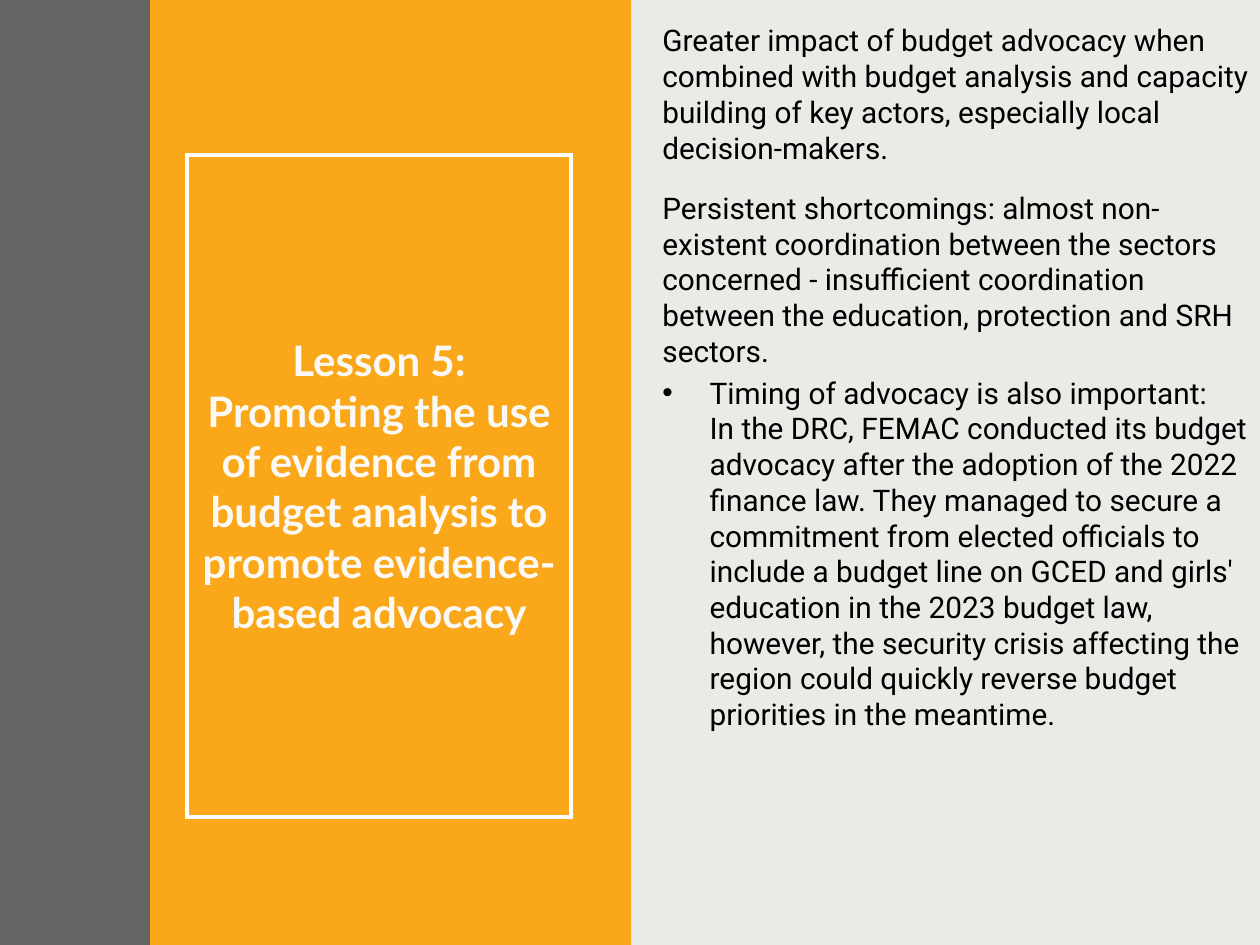
import pptx
import pptx.util
import pptx.dml.color
import pptx.enum.shapes
import pptx.enum.text
import pptx.oxml
import pptx.oxml.ns
from pptx.util import Pt


def color(fill, code, alpha=None):
    """Make a fill solid, with an optional opacity in percent."""
    fill.solid()
    fill.fore_color.rgb = pptx.dml.color.RGBColor.from_string(code)
    if alpha is not None:
        tone = fill._xPr.find(".//" + pptx.oxml.ns.qn("a:srgbClr"))
        node = pptx.oxml.parse_xml(
            f'<a:alpha {pptx.oxml.ns.nsdecls("a")} val="{alpha * 1000}"/>')
        tone.append(node)


def place(shape, left, top, width, height):
    shape.left, shape.top = Pt(left), Pt(top)
    shape.width, shape.height = Pt(width), Pt(height)


deck = pptx.Presentation()
deck.slide_width, deck.slide_height = Pt(720), Pt(540)
slide = deck.slides.add_slide(deck.slide_layouts[1])
color(slide.background.fill, "FAF9F5")

# Full-height panels
panels = [
    (360, 360, "304048", 8),
    (85.7, 275, "FAA819", None),
    (0, 85.7, "404040", 80),
]
for left, width, code, alpha in panels:
    panel = slide.shapes.add_shape(
        pptx.enum.shapes.MSO_SHAPE.RECTANGLE, Pt(left), 0, Pt(width), Pt(540))
    panel.shadow.inherit = False
    panel.line.fill.background()
    color(panel.fill, code, alpha)

# Bring the text in front of the panels
title, body = slide.placeholders
for holder in (title, body):
    slide.shapes._spTree.append(holder._element)
    holder.text_frame.word_wrap = True
    holder.text_frame.auto_size = pptx.enum.text.MSO_AUTO_SIZE.NONE

# Framed title with square corners
place(title, 106.8, 88.7, 219.6, 378)
color(title.line.fill, "FFFFFF")
title.line.width = Pt(2.25)
title.line._get_or_add_ln().append(pptx.oxml.parse_xml(
    f'<a:miter {pptx.oxml.ns.nsdecls("a")} lim="800000"/>'))
title.text_frame.text = (
    "Lesson 5: Promoting the use of evidence from budget analysis "
    "to promote evidence-based advocacy")
title.text_frame.vertical_anchor = pptx.enum.text.MSO_ANCHOR.MIDDLE
para = title.text_frame.paragraphs[0]
para.alignment = pptx.enum.text.PP_ALIGN.CENTER
para.space_before, para.space_after = Pt(18), Pt(4)
font = para.runs[0].font
font.name, font.size, font.bold = "Lato", Pt(24), True
color(font.fill, "FAF9F5")

# Body: text, space before, bulleted
place(body, 371.3, 9.1, 348.7, 510.5)
body.text_frame.margin_right = Pt(6)
points = [
    ("Greater impact of budget advocacy when combined with budget analysis "
     "and capacity building of key actors, especially local "
     "decision-makers.", 0, False),
    ("Persistent shortcomings: almost non-existent coordination between the "
     "sectors concerned - insufficient coordination between the education, "
     "protection and SRH sectors.", 14.1, False),
    ("Timing of advocacy is also important:\v"
     "In the DRC, FEMAC conducted its budget advocacy after the adoption of "
     "the 2022 finance law. They managed to secure a commitment from elected "
     "officials to include a budget line on GCED and girls' education in the "
     "2023 budget law, however, the security crisis affecting the region "
     "could quickly reverse budget priorities in the meantime.", 3.5, True),
]
frame = body.text_frame
for i, (text, gap, bullet) in enumerate(points):
    para = frame.add_paragraph() if i else frame.paragraphs[0]
    para.text = text
    para.space_before = Pt(gap)
    props = para._p.get_or_add_pPr()
    indent = Pt(27) if bullet else 0
    props.set("marL", str(indent))
    props.set("indent", str(-indent))
    mark = '<a:buChar {} char="•"/>' if bullet else "<a:buNone {}/>"
    props.append(pptx.oxml.parse_xml(
        mark.format(pptx.oxml.ns.nsdecls("a"))))
    for run in para.runs:
        run.font.name, run.font.size = "Roboto", Pt(17)
        color(run.font.fill, "000000")

deck.save("out.pptx")
